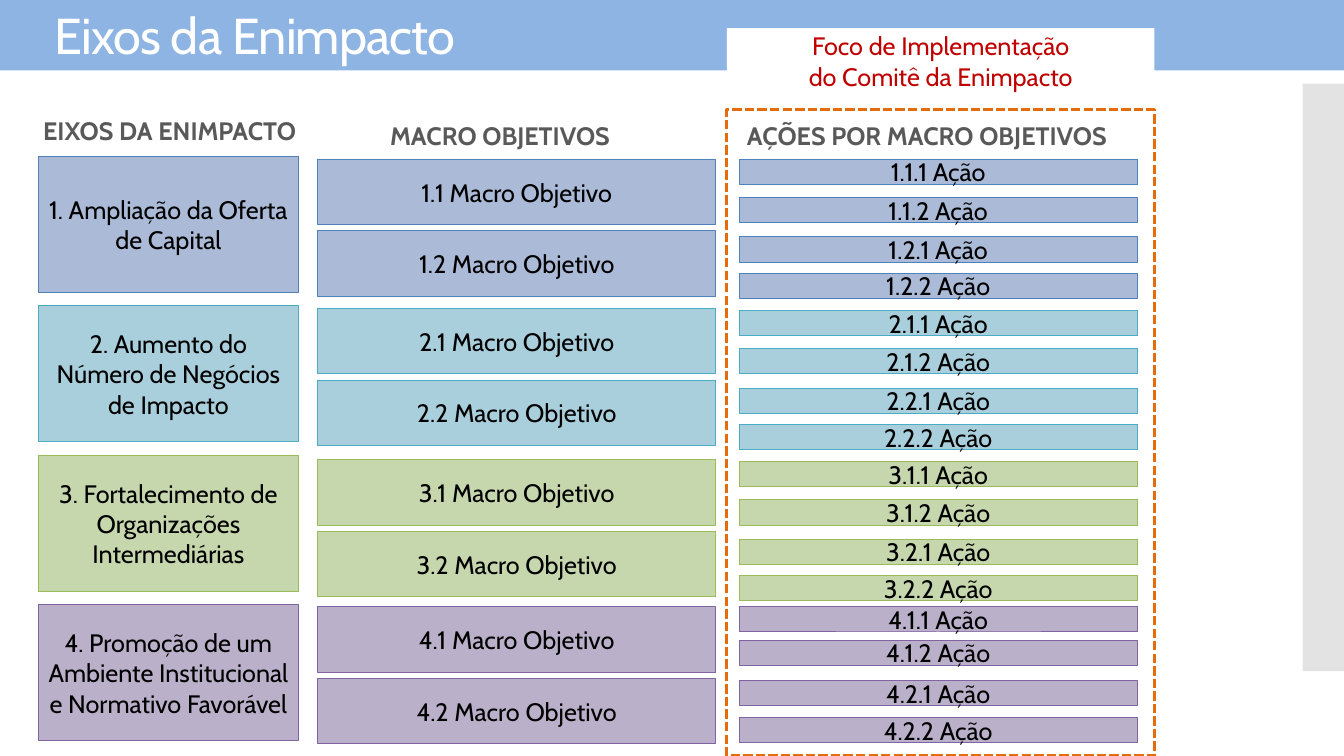
import pptx
import pptx.dml.color
import pptx.enum.dml
import pptx.enum.shapes
import pptx.enum.text
import pptx.oxml.ns
import pptx.util
from lxml import etree
from pptx.util import Inches

FONT = "Cabin"
COLORS = {
    "band": "8EB4E3",
    "side": "C8C8C8",
    "white": "FFFFFF",
    "black": "000000",
    "heading": "595959",
    "focus": "C00000",
    "frame": "E46C0A",
}
MACRO_STEP = 0.71
EVEN_ACTIONS = (0, 0.38, 0.77, 1.13)
LAST_ACTIONS = (0, 0.33, 0.73, 1.1)

# Axis text, fill, line, top of macro objectives, top of actions, action offsets
AXES = [
    ("1. Ampliação da Oferta de Capital", "AABAD7", "4F81BD", 1.58, 1.58, EVEN_ACTIONS),
    ("2. Aumento do Número de Negócios de Impacto", "A9CEDC", "4BACC6", 3.06, 3.08, EVEN_ACTIONS),
    ("3. Fortalecimento de Organizações Intermediárias", "C6D6AD", "9BBB59", 4.56, 4.58, EVEN_ACTIONS),
    ("4. Promoção de um Ambiente Institucional e Normativo Favorável", "BAB0C9", "8064A2", 6.02, 6.02,
     LAST_ACTIONS),
]
HEADINGS = [
    ("EIXOS DA ENIMPACTO", 0.33, 1.09, 3.04),
    ("MACRO OBJETIVOS", 3.77, 1.14, 2.7),
    ("AÇÕES POR MACRO OBJETIVOS", 7.31, 1.14, 3.98),
]


def rgb(color):
    return pptx.dml.color.RGBColor.from_string(color)


def style_paragraph(paragraph, color, size=18, bold=False):
    paragraph.font.name = FONT
    paragraph.font.size = pptx.util.Pt(size)
    paragraph.font.bold = bold
    paragraph.font.color.rgb = rgb(color)


def add_box(slide, left, top, width, height, fill=None, line=None, line_width=0.75):
    shape = slide.shapes.add_shape(
        pptx.enum.shapes.MSO_SHAPE.RECTANGLE, Inches(left), Inches(top), Inches(width), Inches(height))
    shape.shadow.inherit = False
    if fill:
        shape.fill.solid()
        shape.fill.fore_color.rgb = rgb(fill)
    else:
        shape.fill.background()
    if line:
        shape.line.color.rgb = rgb(line)
        shape.line.width = pptx.util.Pt(line_width)
    else:
        shape.line.fill.background()
    return shape


def write_centred(shape, text, color=COLORS["black"]):
    """Write one centred paragraph for each line of the text."""
    frame = shape.text_frame
    frame.word_wrap = True
    frame.vertical_anchor = pptx.enum.text.MSO_ANCHOR.MIDDLE
    frame.text = text
    for paragraph in frame.paragraphs:
        paragraph.alignment = pptx.enum.text.PP_ALIGN.CENTER
        style_paragraph(paragraph, color)


def add_label(slide, text, left, top, width, height, color, size=18, bold=False):
    box = slide.shapes.add_textbox(Inches(left), Inches(top), Inches(width), Inches(height))
    box.text_frame.word_wrap = True
    box.text_frame.text = text
    style_paragraph(box.text_frame.paragraphs[0], color, size, bold)
    return box


def add_title(slide):
    title = add_label(slide, "Eixos da Enimpacto", 0.54, 0.12, 12.23, 0.51, COLORS["white"], size=36)
    frame = title.text_frame
    frame.margin_left = frame.margin_top = frame.margin_right = frame.margin_bottom = 0
    frame.vertical_anchor = pptx.enum.text.MSO_ANCHOR.MIDDLE
    paragraph = frame.paragraphs[0]
    paragraph.line_spacing = 0.9
    paragraph.runs[0]._r.get_or_add_rPr().set("spc", "-60")


def add_background(slide):
    add_box(slide, 0, -0.03, 13.34, 0.73, COLORS["band"])
    side = add_box(slide, 12.92, 0.83, 0.42, 5.83, COLORS["side"])
    color = side.fill._xPr.find(".//" + pptx.oxml.ns.qn("a:srgbClr"))
    etree.SubElement(color, pptx.oxml.ns.qn("a:alpha"), val="50000")


def add_axes(slide):
    for index, (text, fill, line, *_) in enumerate(AXES):
        write_centred(add_box(slide, 0.38, 1.55 + 1.483 * index, 2.58, 1.35, fill, line), text)


def add_macro_objectives(slide):
    for axis, (_, fill, line, top, *_) in enumerate(AXES, 1):
        for index in range(2):
            box = add_box(slide, 3.15, top + MACRO_STEP * index, 3.95, 0.65, fill, line)
            write_centred(box, f"{axis}.{index + 1} Macro Objetivo")


def add_actions(slide):
    for axis, (_, fill, line, _, top, offsets) in enumerate(AXES, 1):
        for index, offset in enumerate(offsets):
            box = add_box(slide, 7.33, top + offset, 3.95, 0.25, fill, line)
            write_centred(box, f"{axis}.{index // 2 + 1}.{index % 2 + 1} Ação")


def add_focus(slide):
    frame = add_box(slide, 7.21, 1.09, 4.24, 6.41, line=COLORS["frame"], line_width=2.25)
    frame.line.dash_style = pptx.enum.dml.MSO_LINE.SQUARE_DOT
    frame.line._ln.find(pptx.oxml.ns.qn("a:prstDash")).set("val", "sysDash")
    caption = add_box(slide, 7.21, 0.28, 4.24, 0.65, COLORS["white"])
    write_centred(caption, "Foco de Implementação\ndo Comitê da Enimpacto", COLORS["focus"])


def main():
    presentation = pptx.Presentation()
    presentation.slide_width = Inches(13.33)
    presentation.slide_height = Inches(7.5)
    slide = presentation.slides.add_slide(presentation.slide_layouts[6])
    add_background(slide)
    add_title(slide)
    add_axes(slide)
    for text, left, top, width in HEADINGS:
        add_label(slide, text, left, top, width, 0.4, COLORS["heading"], bold=True)
    add_macro_objectives(slide)
    add_actions(slide)
    add_focus(slide)
    presentation.save("out.pptx")


if __name__ == "__main__":
    main()
